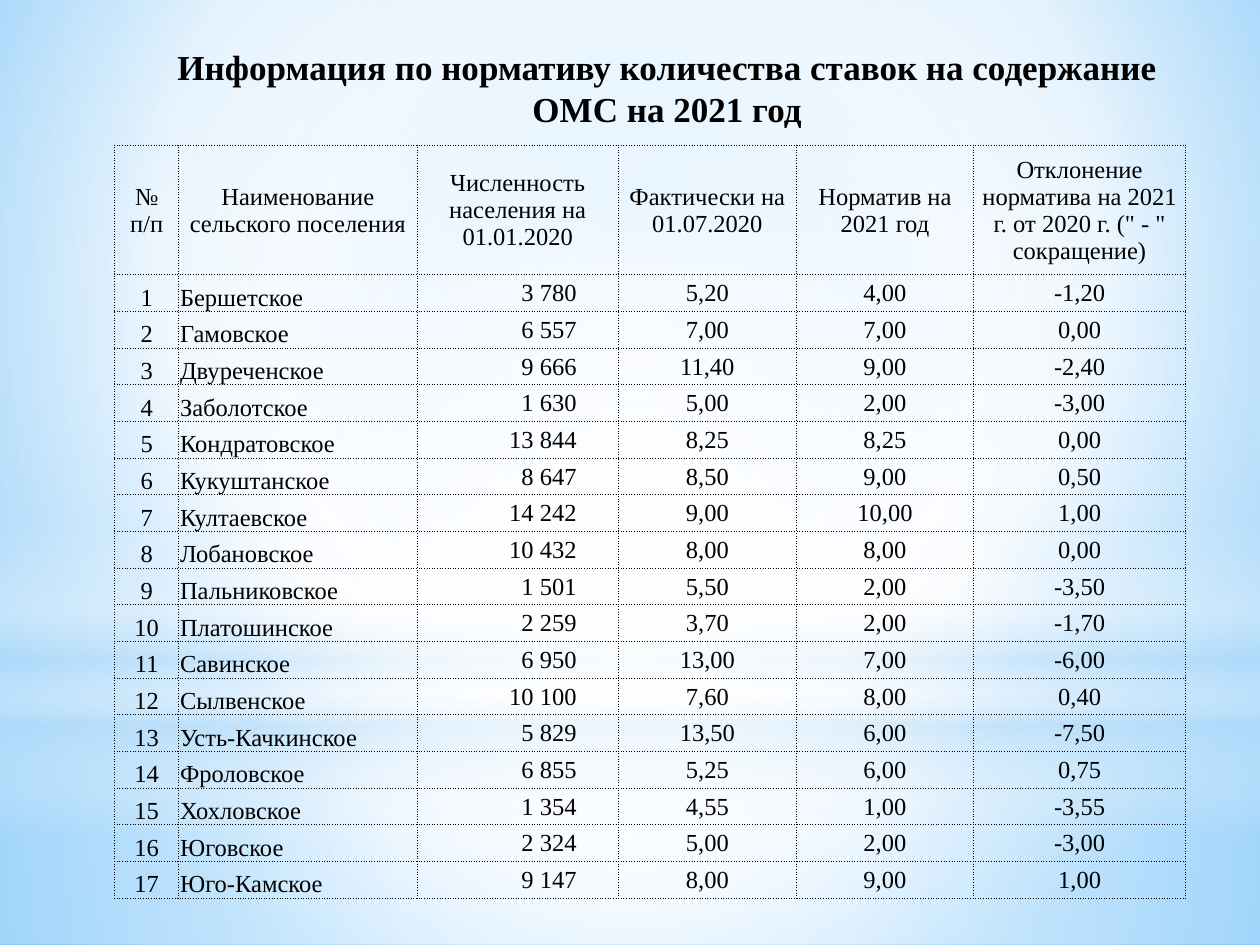
"""Build the slide on staffing norms of rural settlements for 2021."""
from dataclasses import dataclass

from lxml import etree
from pptx import Presentation
from pptx import util as u
from pptx.dml import color
from pptx.enum import shapes, text
from pptx.oxml import ns


@dataclass(frozen=True)
class Theme:
    font: str = "Times New Roman"
    ink: str = "000000"
    white: str = "FFFFFF"
    haze: str = "B4DCFA"
    sky: str = "9ED5FF"
    deep_sky: str = "5BB9FF"
    title_size: int = 20
    table_size: int = 14
    border_width: float = 0.5


THEME = Theme()
SLIDE_WIDTH, SLIDE_HEIGHT = 720, 540
TITLE = "Информация по нормативу количества ставок на содержание ОМС на 2021 год"
HEADINGS = (
    "№ п/п",
    "Наименование сельского поселения",
    "Численность населения на 01.01.2020",
    "Фактически на 01.07.2020",
    "Норматив на 2021 год",
    'Отклонение норматива на 2021 г. от 2020 г. (" - " сокращение)',
)
SETTLEMENTS = (
    ("Бершетское", "3 780", "5,20", "4,00", "-1,20"),
    ("Гамовское", "6 557", "7,00", "7,00", "0,00"),
    ("Двуреченское", "9 666", "11,40", "9,00", "-2,40"),
    ("Заболотское", "1 630", "5,00", "2,00", "-3,00"),
    ("Кондратовское", "13 844", "8,25", "8,25", "0,00"),
    ("Кукуштанское", "8 647", "8,50", "9,00", "0,50"),
    ("Култаевское", "14 242", "9,00", "10,00", "1,00"),
    ("Лобановское", "10 432", "8,00", "8,00", "0,00"),
    ("Пальниковское", "1 501", "5,50", "2,00", "-3,50"),
    ("Платошинское", "2 259", "3,70", "2,00", "-1,70"),
    ("Савинское", "6 950", "13,00", "7,00", "-6,00"),
    ("Сылвенское", "10 100", "7,60", "8,00", "0,40"),
    ("Усть-Качкинское", "5 829", "13,50", "6,00", "-7,50"),
    ("Фроловское", "6 855", "5,25", "6,00", "0,75"),
    ("Хохловское", "1 354", "4,55", "1,00", "-3,55"),
    ("Юговское", "2 324", "5,00", "2,00", "-3,00"),
    ("Юго-Камское", "9 147", "8,00", "9,00", "1,00"),
)
COLUMN_WIDTHS = (36.7, 136.1, 115.2, 101.5, 101.5, 121)
HEADER_HEIGHT, ROW_HEIGHT = 74.2, 20.96
NUMBER, NAME, POPULATION = range(3)
CENTRE = (50, 50, 50, 50)
GLOWS = (
    (shapes.MSO_SHAPE.RECTANGLE, 402, 138, CENTRE,
     ((0, THEME.white, 91), (37, THEME.white, 76), (100, THEME.haze, 79))),
    (shapes.MSO_SHAPE.RECTANGLE, 0, 402, CENTRE,
     ((0, THEME.white, 89), (48, THEME.white, 62), (100, THEME.haze, 79))),
    (shapes.MSO_SHAPE.RECTANGLE, 296.6, 180, None,
     ((0, THEME.white, 0), (29, THEME.white, 30), (45, THEME.haze, 40),
      (55, THEME.white, 26), (65, THEME.haze, 60), (100, THEME.white, 0))),
    (shapes.MSO_SHAPE.OVAL, 126, 402, CENTRE,
     ((0, THEME.white, 100), (56, THEME.white, 0))),
)


def add_node(parent, tag, **attributes):
    node = etree.SubElement(parent, ns.qn(tag))
    for key, value in attributes.items():
        node.set(key, str(value))
    return node


def paint_gradient(owner, fill, stops, focus):
    fill.gradient()
    gradient = owner.element.xpath(".//a:gradFill")[0]
    for child in list(gradient):
        gradient.remove(child)
    stop_list = add_node(gradient, "a:gsLst")
    for position, rgb, opacity in stops:
        stop = add_node(stop_list, "a:gs", pos=position * 1000)
        shade = add_node(stop, "a:srgbClr", val=rgb)
        add_node(shade, "a:alpha", val=opacity * 1000)
    if focus:
        circle = add_node(gradient, "a:path", path="circle")
        edges = {edge: share * 1000 for edge, share in zip("ltrb", focus)}
        add_node(circle, "a:fillToRect", **edges)
    else:
        add_node(gradient, "a:lin", ang=90 * 60000, scaled=0)


def add_backdrop(master, slide):
    sky = ((0, THEME.sky, 100), (60, THEME.white, 100), (100, THEME.deep_sky, 100))
    paint_gradient(master, master.background.fill, sky, (20, 10, 20, 60))
    for order, (outline, top, height, focus, stops) in enumerate(GLOWS):
        glow = slide.shapes.add_shape(
            outline, u.Pt(0), u.Pt(top), u.Pt(SLIDE_WIDTH), u.Pt(height))
        glow.shadow.inherit = False
        glow.line.fill.background()
        paint_gradient(glow, glow.fill, stops, focus)
        glow.element.nvSpPr.cNvPr.set("id", str(100 + order))
        master.shapes.element.insert(2 + order, glow.element)


def style_paragraph(paragraph, size, align, bold=False):
    paragraph.alignment = align
    paragraph.font.name = THEME.font
    paragraph.font.size = u.Pt(size)
    paragraph.font.bold = bold
    paragraph.font.color.rgb = color.RGBColor.from_string(THEME.ink)


def add_title(slide):
    title = slide.shapes.title
    title.left, title.top = u.Pt(76.3), u.Pt(20.9)
    title.width, title.height = u.Pt(609.8), u.Pt(38.9)
    frame = title.text_frame
    frame.text = TITLE
    frame.word_wrap = True
    frame.auto_size = text.MSO_AUTO_SIZE.NONE
    frame.vertical_anchor = text.MSO_ANCHOR.TOP
    frame.margin_top = u.Pt(5)
    style_paragraph(frame.paragraphs[0], THEME.title_size, text.PP_ALIGN.CENTER, True)


def add_borders(cell):
    properties = cell._tc.get_or_add_tcPr()
    for side in ("a:lnL", "a:lnR", "a:lnT", "a:lnB"):
        border = add_node(properties, side, w=u.Pt(THEME.border_width))
        add_node(add_node(border, "a:solidFill"), "a:srgbClr", val=THEME.ink)
        add_node(border, "a:prstDash", val="dot")


def fill_cell(cell, content, align, anchor, right_margin):
    cell.text = content
    cell.vertical_anchor = anchor
    cell.margin_left = cell.margin_top = u.Pt(0.7)
    cell.margin_right, cell.margin_bottom = u.Pt(right_margin), u.Pt(0)
    add_borders(cell)
    cell.fill.background()
    style_paragraph(cell.text_frame.paragraphs[0], THEME.table_size, align)


def add_staffing_table(slide):
    numbered = [(str(n), *values) for n, values in enumerate(SETTLEMENTS, 1)]
    records = [HEADINGS, *numbered]
    height = HEADER_HEIGHT + ROW_HEIGHT * len(SETTLEMENTS)
    table = slide.shapes.add_table(
        len(records), len(HEADINGS), u.Pt(65.5), u.Pt(82.8),
        u.Pt(sum(COLUMN_WIDTHS)), u.Pt(height)).table
    table.first_row = table.horz_banding = False
    for column, width in zip(table.columns, COLUMN_WIDTHS):
        column.width = u.Pt(width)
    for row, record in enumerate(records):
        table.rows[row].height = u.Pt(ROW_HEIGHT if row else HEADER_HEIGHT)
        for column, content in enumerate(record):
            align, anchor, right_margin = text.PP_ALIGN.CENTER, text.MSO_ANCHOR.MIDDLE, 0.7
            if row and column in (NUMBER, NAME):
                anchor = text.MSO_ANCHOR.BOTTOM
            if row and column == NAME:
                align = text.PP_ALIGN.LEFT
            if row and column == POPULATION:
                align, right_margin = text.PP_ALIGN.RIGHT, 24
            fill_cell(table.cell(row, column), content, align, anchor, right_margin)


def main():
    deck = Presentation()
    deck.slide_width, deck.slide_height = u.Pt(SLIDE_WIDTH), u.Pt(SLIDE_HEIGHT)
    slide = deck.slides.add_slide(deck.slide_layouts[5])
    add_backdrop(deck.slide_master, slide)
    add_title(slide)
    add_staffing_table(slide)
    deck.save("out.pptx")


if __name__ == "__main__":
    main()
